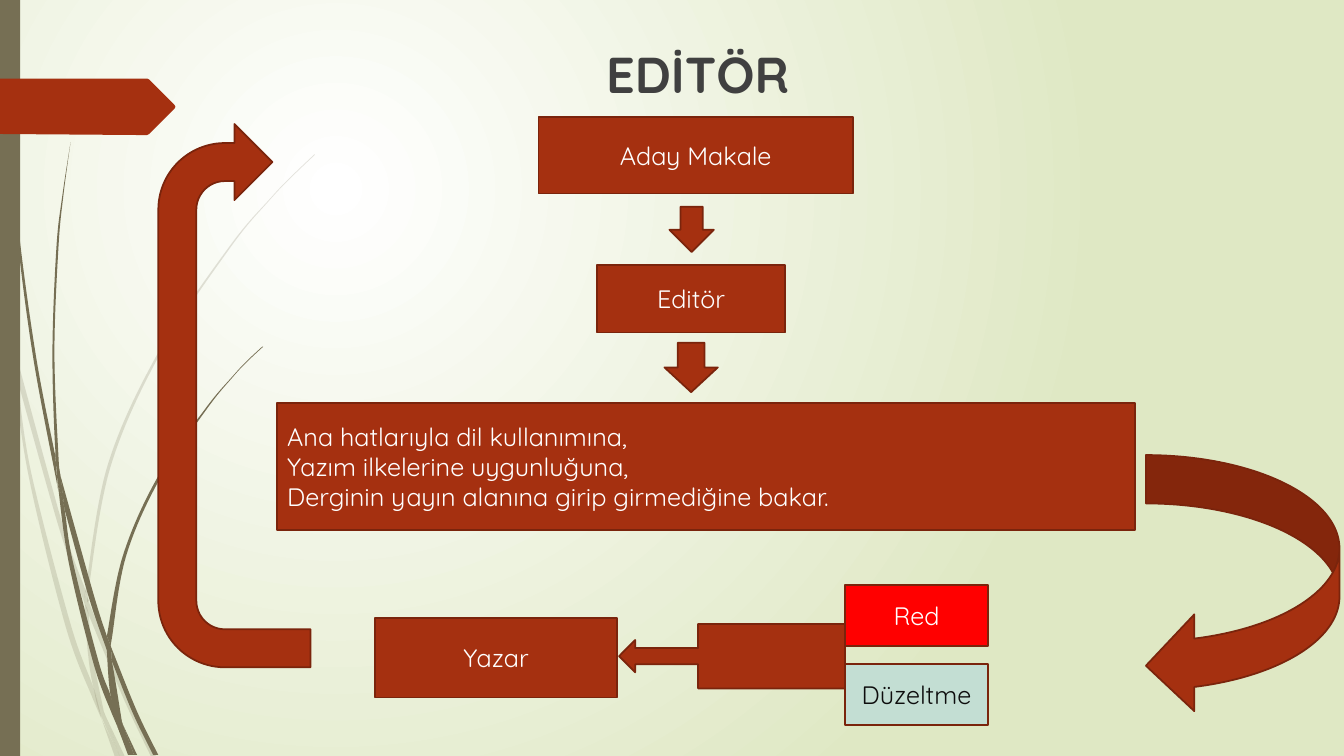
from dataclasses import dataclass

from lxml import etree
from pptx import Presentation
from pptx.dml.color import RGBColor
from pptx.enum.shapes import MSO_SHAPE as SHAPE
from pptx.enum.text import MSO_ANCHOR as ANCHOR, PP_ALIGN as ALIGN
from pptx.oxml.ns import qn
from pptx.util import Inches, Pt


@dataclass(frozen=True)
class Theme:
    font: str = "Quicksand"
    title_size: int = 36
    body_size: int = 18
    line_width: float = 1.25
    accent: str = "A53010"
    outline: str = "7A240C"
    wisp: str = "766F54"
    white: str = "FFFFFF"
    backdrop: str = "DFE8C4"
    title: str = "404040"
    reject: str = "FF0000"
    revise: str = "C3DED3"
    dark: str = "0D0D0D"


THEME = Theme()

PALE_WISPS = [
    ([(0.11, 3.5), (0.09, 3.22), (0, 2.82)], [(0, 2.99), (0.1, 3.44)]),
    ([(0.14, 3.45), (0.62, 5.2), (0.85, 5.86)],
     [(0.84, 5.99), (0.58, 5.22), (0.17, 3.76)]),
    ([(0.88, 5.96), (0.92, 6.07), (1.27, 6.92), (1.55, 7.51)],
     [(1.5, 7.51), (1.23, 6.94), (0.88, 6.1)]),
    ([(1.05, 7.11), (1.24, 7.51)], [(1.19, 7.51)]),
    ([(0.11, 3.5), (0.17, 3.76), (0.31, 4.69), (0.7, 6.19), (0.93, 6.83), (1.01, 7.14)],
     [(0.92, 6.93), (0.65, 6.21), (0.28, 4.7), (0.11, 3.5)]),
    ([(0.84, 5.99), (0.87, 6.46), (0.93, 6.83), (1.05, 7.11)],
     [(1.03, 7.06), (0.91, 6.46), (0.88, 6.1), (0.84, 5.99)]),
    ([(0.88, 5.96), (0.88, 5.84), (1.1, 4.62), (1.6, 3.49), (2.29, 2.45),
      (2.68, 1.98), (2.9, 1.75), (3.12, 1.54)],
     [(3.12, 1.53), (2.89, 1.75), (2.68, 1.97), (2.28, 2.44), (1.58, 3.48),
      (1.07, 4.61), (0.85, 5.84), (0.85, 5.86)]),
    ([(1.01, 7.14), (1.14, 7.51)], [(1.19, 7.51)]),
    ([(0.84, 5.99), (0.88, 6.1)], [(0.88, 5.96), (0.85, 5.86)]),
    ([(0.93, 6.83), (0.99, 7.07), (1.19, 7.51)], [(1.05, 7.11), (0.96, 6.92)]),
]

DARK_WISPS = [
    ([(0.04, 0), (0.05, 0.48), (0.08, 1.09), (0.19, 2.32), (0.36, 3.55), (0.55, 4.53)],
     [(0.57, 4.81), (0.56, 4.77), (0.33, 3.55), (0.17, 2.33), (0.07, 1.1),
      (0.04, 0.48), (0.03, 0)]),
    ([(0.6, 4.72), (0.93, 5.9), (1.06, 6.31)],
     [(1.06, 6.45), (0.88, 5.92), (0.64, 5.05)]),
    ([(1.1, 6.41), (1.13, 6.49), (1.36, 7.06), (1.57, 7.49)],
     [(1.52, 7.49), (1.32, 7.08), (1.11, 6.56)]),
    ([(0.57, 4.77), (0.64, 5.05), (0.72, 5.56), (0.98, 6.57), (1.1, 6.91), (1.17, 7.22)],
     [(1.11, 7.08), (0.93, 6.59), (0.68, 5.57), (0.57, 4.77)]),
    ([(0.6, 4.72), (0.58, 4.53), (0.54, 3.49), (0.58, 2.45), (0.63, 1.93), (0.7, 1.41)],
     [(0.7, 1.41), (0.62, 1.93), (0.56, 2.45), (0.52, 3.49), (0.55, 4.49), (0.6, 4.72)]),
    ([(1.22, 7.19), (1.36, 7.49)], [(1.33, 7.49)]),
    ([(0.55, 4.49), (0.6, 4.72), (0.64, 5.05)], [(0.57, 4.77), (0.55, 4.53)]),
    ([(1.1, 6.41), (1.11, 6.33), (1.25, 5.52), (1.58, 4.76), (2.05, 4.06),
      (2.31, 3.74), (2.45, 3.59), (2.61, 3.44)],
     [(2.6, 3.44), (2.45, 3.58), (2.31, 3.73), (2.04, 4.05), (1.56, 4.74),
      (1.22, 5.51), (1.06, 6.31)]),
    ([(1.17, 7.22), (1.31, 7.49)], [(1.27, 7.49)]),
    ([(1.06, 6.45), (1.1, 6.91), (1.22, 7.19)],
     [(1.21, 7.16), (1.11, 6.56), (1.06, 6.45)]),
    ([(1.06, 6.31), (1.1, 6.41)], [(1.11, 6.56), (1.06, 6.45)]),
    ([(1.1, 6.91), (1.17, 7.22), (1.3, 7.49)], [(1.33, 7.49), (1.22, 7.19), (1.16, 7.06)]),
]

TAG = [(0, 0.78), (1.46, 0.78), (1.48, 0.79), (1.73, 1.04), (1.74, 1.06),
       (1.73, 1.08), (1.48, 1.33), (1.46, 1.34), (1.36, 1.34), (0, 1.33)]


def rgb(color):
    return RGBColor.from_string(color)


def paint(sp, fill, line=None, alpha=None):
    sp.shadow.inherit = False
    sp.fill.solid()
    sp.fill.fore_color.rgb = rgb(fill)
    if alpha:
        color = sp.element.spPr.find(qn("a:solidFill"))[0]
        etree.SubElement(color, qn("a:alpha"), val=str(alpha * 1000))
    if line:
        sp.line.color.rgb = rgb(line)
        sp.line.width = Pt(THEME.line_width)
    else:
        sp.line.fill.background()


def write(tf, lines, size, color, align=ALIGN.CENTER, bold=None):
    tf.word_wrap = True
    for i, line in enumerate(lines):
        p = tf.add_paragraph() if i else tf.paragraphs[0]
        p.text = line
        p.alignment = align
        p.font.name = THEME.font
        p.font.size = Pt(size)
        p.font.bold = bold
        p.font.color.rgb = rgb(color)


def add_outline(shapes, points, fill, alpha=None):
    start, *rest = [(Inches(x), Inches(y)) for x, y in points]
    builder = shapes.build_freeform(*start)
    builder.add_line_segments(rest, close=True)
    sp = builder.convert_to_shape()
    paint(sp, fill, alpha=alpha)
    return sp


def curve_edge(segments, edge, left, top):
    padded = [edge[0], *edge, edge[-1]]
    for segment, a, b, c, d in zip(segments, padded, padded[1:], padded[2:], padded[3:]):
        controls = ([q + (r - p) / 6 for p, q, r in zip(a, b, c)],
                    [q - (r - p) / 6 for p, q, r in zip(b, c, d)])
        segment.tag = qn("a:cubicBezTo")
        for i, (x, y) in enumerate(controls):
            point = etree.Element(qn("a:pt"), x=str(Inches(x) - left), y=str(Inches(y) - top))
            segment.insert(i, point)


def add_wisps(s, wisps, alpha=None):
    shapes = s.shapes.add_group_shape().shapes
    for near, far in wisps:
        sp = add_outline(shapes, near + far, THEME.wisp, alpha)
        segments = list(sp.element.iter(qn("a:lnTo")))
        curve_edge(segments, near, sp.left, sp.top)
        curve_edge(segments[len(near):], far, sp.left, sp.top)


def add_preset(s, kind, box, fill=THEME.accent, line=THEME.outline, rotation=0):
    sp = s.shapes.add_shape(kind, *map(Inches, box))
    sp.rotation = rotation
    paint(sp, fill, line)
    return sp


def add_box(s, box, *lines, fill=THEME.accent, color=THEME.white, align=ALIGN.CENTER):
    tf = add_preset(s, SHAPE.RECTANGLE, box, fill).text_frame
    tf.vertical_anchor = ANCHOR.MIDDLE
    write(tf, lines, THEME.body_size, color, align)


def add_title(s, box, text):
    tf = s.shapes.add_textbox(*map(Inches, box)).text_frame
    write(tf, [text], THEME.title_size, THEME.title, bold=True)
    tf.paragraphs[0].space_before = Pt(10)


def set_background(s):
    fill = s.background.fill
    fill.gradient()
    for stop, color, position in zip(fill.gradient_stops, (THEME.white, THEME.backdrop), (0, 1)):
        stop.color.rgb = rgb(color)
        stop.position = position
    grad = s.element.find(".//" + qn("a:gradFill"))
    grad.remove(grad.find(qn("a:lin")))
    circle = etree.SubElement(grad, qn("a:path"), path="circle")
    etree.SubElement(circle, qn("a:fillToRect"), l="50000", t="50000", r="100000", b="100000")


def main():
    prs = Presentation()
    prs.slide_width, prs.slide_height = Inches(13.33), Inches(7.5)
    s = prs.slides.add_slide(prs.slide_layouts[6])
    set_background(s)
    add_wisps(s, PALE_WISPS, alpha=20)
    add_wisps(s, DARK_WISPS)
    add_preset(s, SHAPE.RECTANGLE, (0, 0, 0.2, 7.5), THEME.wisp, line=None)
    add_outline(s.shapes, TAG, THEME.accent)

    add_title(s, (1.22, 0.38, 11.4, 7.12), "EDİTÖR")
    add_box(s, (5.34, 1.16, 3.12, 0.76), "Aday Makale")
    add_box(s, (5.92, 2.63, 1.87, 0.67), "Editör")
    add_preset(s, SHAPE.DOWN_ARROW, (6.64, 2.05, 0.44, 0.45))
    add_preset(s, SHAPE.DOWN_ARROW, (6.59, 3.4, 0.53, 0.49))
    add_box(s, (2.75, 4, 8.51, 1.26),
            "Ana hatlarıyla dil kullanımına,",
            "Yazım ilkelerine uygunluğuna,",
            "Derginin yayın alanına girip girmediğine bakar.",
            align=ALIGN.LEFT)
    add_preset(s, SHAPE.CURVED_DOWN_ARROW, (11.04, 4.84, 2.57, 1.92), rotation=90)
    add_box(s, (8.38, 5.8, 1.42, 0.61), "Red", fill=THEME.reject)
    add_box(s, (8.38, 6.59, 1.42, 0.6), "Düzeltme", fill=THEME.revise, color=THEME.dark)
    add_preset(s, SHAPE.LEFT_ARROW_CALLOUT, (6.14, 6.19, 2.24, 0.64))
    add_box(s, (3.72, 6.13, 2.4, 0.79), "Yazar")
    add_preset(s, SHAPE.U_TURN_ARROW, (-0.37, 3.17, 5.39, 1.51), rotation=270)
    prs.save("out.pptx")


if __name__ == "__main__":
    main()
